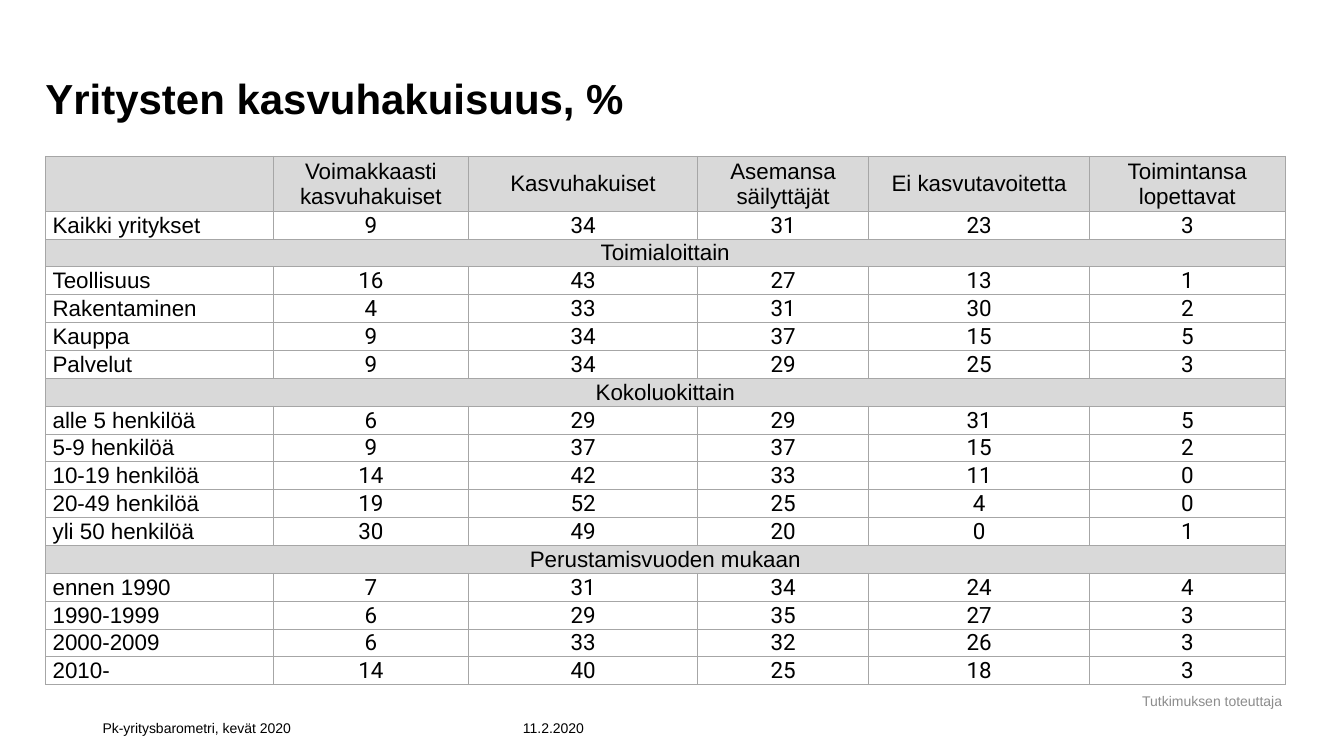
import pptx
import pptx.dml.color
import pptx.enum.text
import pptx.oxml
import pptx.oxml.ns
import pptx.util

Pt = pptx.util.Pt
RGBColor = pptx.dml.color.RGBColor
Align = pptx.enum.text.PP_ALIGN
Anchor = pptx.enum.text.MSO_ANCHOR

BLACK = RGBColor(0x00, 0x00, 0x00)
GREY = RGBColor(0x8C, 0x8C, 0x8C)
BAND = RGBColor(0xD9, 0xD9, 0xD9)
BORDER = RGBColor(0xA6, 0xA6, 0xA6)

COLUMN_WIDTHS = [162.7, 139.7, 163.4, 122.4, 157.7, 139.7]
HEADER_HEIGHT = 36
ROW_HEIGHT = 18
ROWS = [
    ["", "Voimakkaasti kasvuhakuiset", "Kasvuhakuiset", "Asemansa säilyttäjät",
     "Ei kasvutavoitetta", "Toimintansa lopettavat"],
    ["Kaikki yritykset", 9, 34, 31, 23, 3],
    ["Toimialoittain"],
    ["Teollisuus", 16, 43, 27, 13, 1],
    ["Rakentaminen", 4, 33, 31, 30, 2],
    ["Kauppa", 9, 34, 37, 15, 5],
    ["Palvelut", 9, 34, 29, 25, 3],
    ["Kokoluokittain"],
    ["alle 5 henkilöä", 6, 29, 29, 31, 5],
    ["5-9 henkilöä", 9, 37, 37, 15, 2],
    ["10-19 henkilöä", 14, 42, 33, 11, 0],
    ["20-49 henkilöä", 19, 52, 25, 4, 0],
    ["yli 50 henkilöä", 30, 49, 20, 0, 1],
    ["Perustamisvuoden mukaan"],
    ["ennen 1990", 7, 31, 34, 24, 4],
    ["1990-1999", 6, 29, 35, 27, 3],
    ["2000-2009", 6, 33, 32, 26, 3],
    ["2010-", 14, 40, 25, 18, 3],
]


def write_text(text_frame, text, size=16, font="Arial", color=BLACK, bold=False, align=Align.LEFT):
    paragraph = text_frame.paragraphs[0]
    paragraph.alignment = align
    run = paragraph.add_run()
    run.text = text
    run.font.size = Pt(size)
    run.font.name = font
    run.font.bold = bold
    run.font.color.rgb = color


class SlideBuilder:
    def __init__(self, slide, heading_size=30, note_size=10, border_width=0.5):
        self.slide = slide
        self.heading_size = heading_size
        self.note_size = note_size
        self.border_width = border_width

    def title(self, text, left, top, width, height):
        shape = self.slide.shapes.title
        shape.left, shape.top, shape.width, shape.height = map(Pt, (left, top, width, height))
        frame = shape.text_frame
        frame.margin_left = frame.margin_top = frame.margin_right = frame.margin_bottom = 0
        frame.vertical_anchor = Anchor.BOTTOM
        frame.auto_size = pptx.enum.text.MSO_AUTO_SIZE.NONE
        write_text(frame, text, size=self.heading_size, bold=True)

    def note(self, text, left, top, width, height, anchor=Anchor.BOTTOM, **text_format):
        box = self.slide.shapes.add_textbox(Pt(left), Pt(top), Pt(width), Pt(height))
        box.text_frame.word_wrap = True
        box.text_frame.vertical_anchor = anchor
        write_text(box.text_frame, text, size=self.note_size, **text_format)

    def borders(self, cell):
        properties = cell._tc.get_or_add_tcPr()
        for side in ("lnL", "lnR", "lnT", "lnB"):
            properties.append(pptx.oxml.parse_xml(
                f'<a:{side} {pptx.oxml.ns.nsdecls("a")} w="{Pt(self.border_width)}">'
                f'<a:solidFill><a:srgbClr val="{BORDER}"/></a:solidFill></a:{side}>'))

    def cell(self, cell, value, shaded, label):
        cell.margin_left = Pt(5.2 if label else 0.7)
        cell.margin_right = cell.margin_top = Pt(0.7)
        cell.margin_bottom = 0
        cell.vertical_anchor = Anchor.MIDDLE
        self.borders(cell)
        if shaded:
            cell.fill.solid()
            cell.fill.fore_color.rgb = BAND
        else:
            cell.fill.background()
        if value != "":
            write_text(cell.text_frame, str(value),
                       font="Roboto" if isinstance(value, int) else "Arial",
                       align=Align.LEFT if label else Align.CENTER)

    def table(self, rows, left, top):
        heights = [HEADER_HEIGHT] + [ROW_HEIGHT] * (len(rows) - 1)
        column_count = len(COLUMN_WIDTHS)
        table = self.slide.shapes.add_table(
            len(rows), column_count, Pt(left), Pt(top),
            Pt(sum(COLUMN_WIDTHS)), Pt(sum(heights))).table
        table.first_row = table.horz_banding = False
        for column, width in zip(table.columns, COLUMN_WIDTHS):
            column.width = Pt(width)
        for row_index, values in enumerate(rows):
            table.rows[row_index].height = Pt(heights[row_index])
            section = len(values) == 1
            shaded = section or row_index == 0
            padded = values + [""] * (column_count - len(values))
            for column_index, value in enumerate(padded):
                self.cell(table.cell(row_index, column_index), value, shaded,
                          column_index == 0 and not shaded)
            if section:
                table.cell(row_index, 0).merge(table.cell(row_index, column_count - 1))


def main():
    presentation = pptx.Presentation()
    presentation.slide_width = Pt(960)
    presentation.slide_height = Pt(540)
    builder = SlideBuilder(presentation.slides.add_slide(presentation.slide_layouts[5]))
    builder.note("Tutkimuksen toteuttaja", 803.5, 491, 124.6, 18.7,
                 anchor=Anchor.MIDDLE, color=GREY, align=Align.CENTER)
    builder.note("11.2.2020", 366.5, 504, 62.6, 25.2)
    builder.note("Pk-yritysbarometri, kevät 2020", 66.2, 504, 300.2, 25.2)
    builder.title("Yritysten kasvuhakuisuus, %", 32.4, 0, 885.6, 87.8)
    builder.table(ROWS, 32.4, 111.6)
    presentation.save("out.pptx")


if __name__ == "__main__":
    main()
